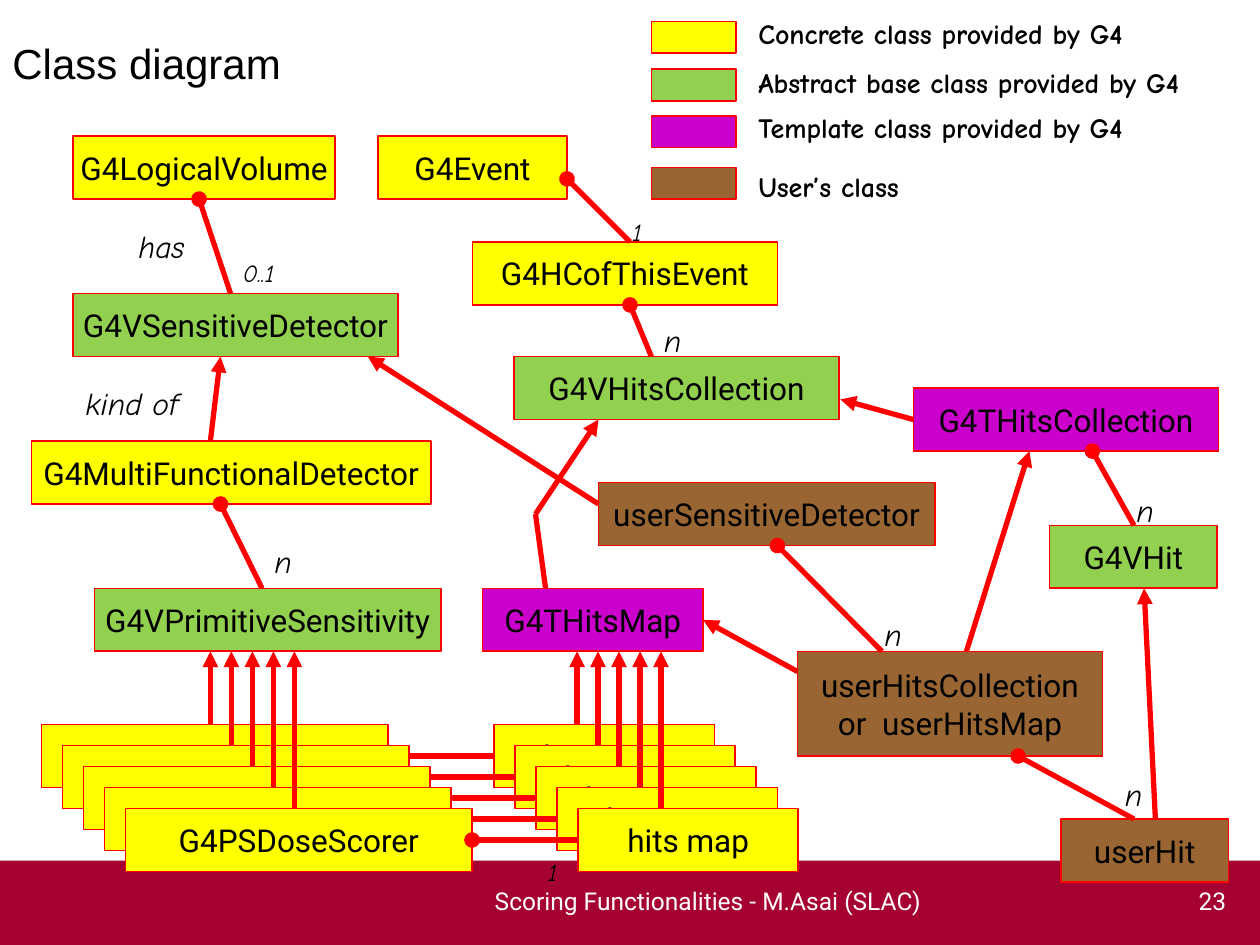
from lxml import etree
from pptx import Presentation
from pptx.dml.color import RGBColor
from pptx.enum.shapes import MSO_CONNECTOR, MSO_SHAPE
from pptx.enum.text import MSO_ANCHOR, PP_ALIGN
from pptx.oxml.ns import qn
from pptx.util import Inches, Pt

RECTANGLE = MSO_SHAPE.RECTANGLE
STRAIGHT = MSO_CONNECTOR.STRAIGHT
TOP, MIDDLE = MSO_ANCHOR.TOP, MSO_ANCHOR.MIDDLE
LEFT, CENTER, RIGHT = PP_ALIGN.LEFT, PP_ALIGN.CENTER, PP_ALIGN.RIGHT

YELLOW, GREEN, PURPLE, BROWN = "FFFF00", "92D050", "CC00CC", "996633"
RED, CRIMSON, BLACK, WHITE = "FF0000", "A60231", "000000", "FFFFFF"
STEP = 1 / 6
STACK_SIZE = 5

CLASSES = [
    ("G4LogicalVolume", YELLOW, 0.58, 1.08, 2.08, 0.5),
    ("G4VSensitiveDetector", GREEN, 0.58, 2.33, 2.58, 0.5),
    ("G4MultiFunctionalDetector", YELLOW, 0.25, 3.5, 3.17, 0.5),
    ("G4VPrimitiveSensitivity", GREEN, 0.75, 4.67, 2.75, 0.5),
    ("G4Event", YELLOW, 3, 1.08, 1.5, 0.5),
    ("G4HCofThisEvent", YELLOW, 3.75, 1.92, 2.42, 0.5),
    ("G4VHitsCollection", GREEN, 4.08, 2.83, 2.58, 0.5),
    ("G4THitsCollection", PURPLE, 7.25, 3.08, 2.42, 0.5),
    ("userSensitiveDetector", BROWN, 4.75, 3.83, 2.67, 0.5),
    ("G4THitsMap", PURPLE, 3.83, 4.67, 1.75, 0.5),
    ("userHitsCollection\vor  userHitsMap", BROWN, 6.33, 5.17, 2.42, 0.83),
    ("G4VHit", GREEN, 8.33, 4.17, 1.33, 0.5),
    ("userHit", BROWN, 8.42, 6.5, 1.33, 0.5),
]

OWNERSHIPS = [
    (1.58, 1.58, 1.83, 2.33),
    (4.5, 1.42, 5, 1.92),
    (5, 2.42, 5.17, 2.83),
    (8.67, 3.58, 9, 4.17),
    (8.08, 6, 9, 6.5),
    (1.75, 4, 2.08, 4.67),
    (6.17, 4.33, 7, 5.17),
]

INHERITANCES = [
    (1.75, 2.83, 1.67, 3.5),
    (2.92, 2.83, 4.75, 4),
    (6.67, 3.17, 7.25, 3.33),
    (4.75, 3.33, 4.25, 4.08),
    (8.17, 3.58, 7.67, 5.17),
    (9.08, 4.67, 9.17, 6.5),
    (5.58, 4.92, 6.33, 5.33),
]

LEGEND = [
    ("Concrete class provided by G4", YELLOW, 0.17, 0.08),
    ("Abstract base class provided by G4", GREEN, 0.55, 0.47),
    ("Template class provided by G4", PURPLE, 0.92, 0.83),
    ("User’s class", BROWN, 1.33, 1.3),
]

LABELS = [
    ("has", 18, 1, 1.75, 1),
    ("kind of", 18, 0.58, 3, 1.17),
    ("0..1", 14, 1.83, 2, 0.67),
    ("1", 14, 4.25, 6.75, 0.42),
    ("1", 14, 4.92, 1.67, 0.42),
    ("n", 18, 2.08, 4.25, 0.42),
    ("n", 18, 5.17, 2.5, 0.42),
    ("n", 18, 8.83, 6.1, 0.42),
    ("n", 18, 8.92, 3.85, 0.42),
    ("n", 18, 6.92, 4.83, 0.42),
]


def color(hex_value):
    return RGBColor.from_string(hex_value)


def write(box, text, size, font="Roboto", ink=BLACK, align=LEFT, anchor=MIDDLE,
          wrap=True, bold=False, italic=False):
    frame = box.text_frame
    frame.word_wrap = wrap
    frame.vertical_anchor = anchor
    para = frame.paragraphs[0]
    para.text = text
    para.alignment = align
    for span in para.runs:
        span.font.name = font
        span.font.size = Pt(size)
        span.font.bold = bold
        span.font.italic = italic
        span.font.color.rgb = color(ink)


def add_text(shapes, text, left, top, width, height, size, **style):
    box = shapes.add_textbox(Inches(left), Inches(top), Inches(width), Inches(height))
    write(box, text, size, **style)
    return box


def add_rectangle(shapes, fill, left, top, width, height, outline=RED):
    box = shapes.add_shape(
        RECTANGLE, Inches(left), Inches(top), Inches(width), Inches(height))
    box.shadow.inherit = False
    box.fill.solid()
    box.fill.fore_color.rgb = color(fill)
    if outline:
        box.line.color.rgb = color(outline)
        box.line.width = Pt(1)
    else:
        box.line.fill.background()
    return box


def add_class(shapes, name, fill, left, top, width, height):
    box = add_rectangle(shapes, fill, left, top, width, height)
    write(box, name, 18, align=CENTER, wrap=False)


def add_link(shapes, start_x, start_y, end_x, end_y, head=None):
    link = shapes.add_connector(
        STRAIGHT, Inches(start_x), Inches(start_y), Inches(end_x), Inches(end_y))
    link.line.color.rgb = color(RED)
    link.line.width = Pt(3)
    if head:
        etree.SubElement(link.get_or_add_ln(), qn("a:headEnd"), type=head)
    etree.SubElement(link._element.spPr, qn("a:effectLst"))


def add_legend(shapes):
    for text, fill, swatch_top, text_top in LEGEND:
        add_rectangle(shapes, fill, 5.17, swatch_top, 0.67, 0.25)
        box = add_text(shapes, text, 5.92, text_top, 4, 0.37, 16,
                       font="Comic Neue", anchor=TOP, bold=True)
        box.fill.solid()
        box.fill.fore_color.rgb = color(WHITE)


def add_scorer_stack(shapes):
    for index in range(STACK_SIZE):
        shift = index * STEP
        top = 5.75 + shift
        pair = shapes.add_group_shape().shapes
        add_class(pair, "G4PSDoseScorer", YELLOW, 0.33 + shift, top, 2.75, 0.5)
        add_class(pair, "hits map", YELLOW, 3.92 + shift, top, 1.75, 0.5)
        add_link(pair, 3.08 + shift, top + 0.25, 3.92 + shift, top + 0.25, "oval")
    for first_x in (1.67, 4.58):
        for index in range(STACK_SIZE):
            shift = index * STEP
            x = first_x + shift
            add_link(shapes, x, 5.17, x, 5.75 + shift, "triangle")


def main():
    deck = Presentation()
    deck.slide_width = Inches(10)
    deck.slide_height = Inches(7.5)
    page = deck.slides.add_slide(deck.slide_layouts[6])
    shapes = page.shapes

    add_rectangle(shapes, CRIMSON, 0, 6.83, 10, 0.67, outline=None)
    add_text(shapes, "Class diagram", 0, 0.08, 4.42, 0.83, 24, font="Arial")
    add_text(shapes, "Scoring Functionalities - M.Asai (SLAC)", 1.98, 6.95, 7.28, 0.4,
             14, ink=WHITE, align=CENTER)
    add_text(shapes, "23", 9.38, 6.95, 0.45, 0.4, 14, ink=WHITE, align=RIGHT)

    for entry in CLASSES:
        add_class(shapes, *entry)
    for ends in OWNERSHIPS:
        add_link(shapes, *ends, head="oval")
    for ends in INHERITANCES:
        add_link(shapes, *ends, head="triangle")
    add_link(shapes, 4.25, 4.08, 4.33, 4.67)

    add_legend(shapes)
    add_scorer_stack(shapes)
    for text, size, left, top, width in LABELS:
        add_text(shapes, text, left, top, width, 0.4 if size == 18 else 0.33, size,
                 font="Comic Neue", anchor=TOP, italic=True)

    deck.save("out.pptx")


if __name__ == "__main__":
    main()
